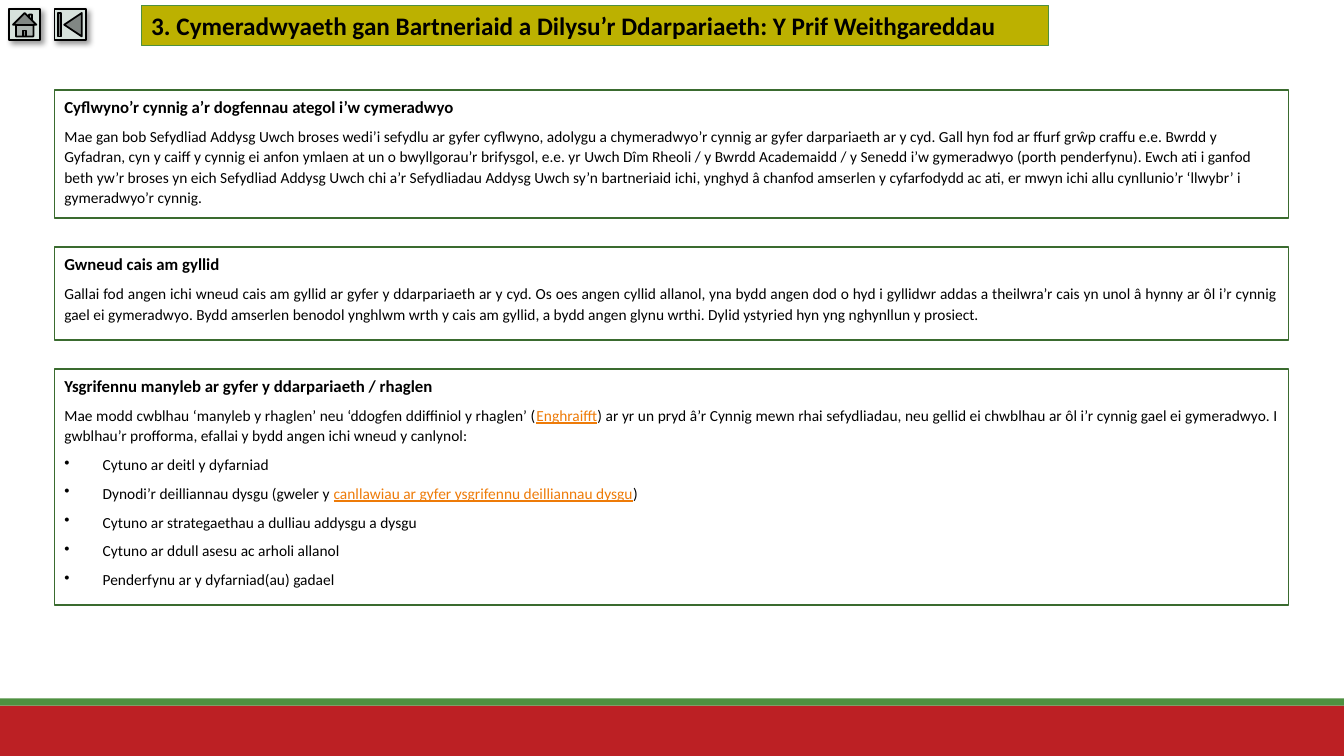
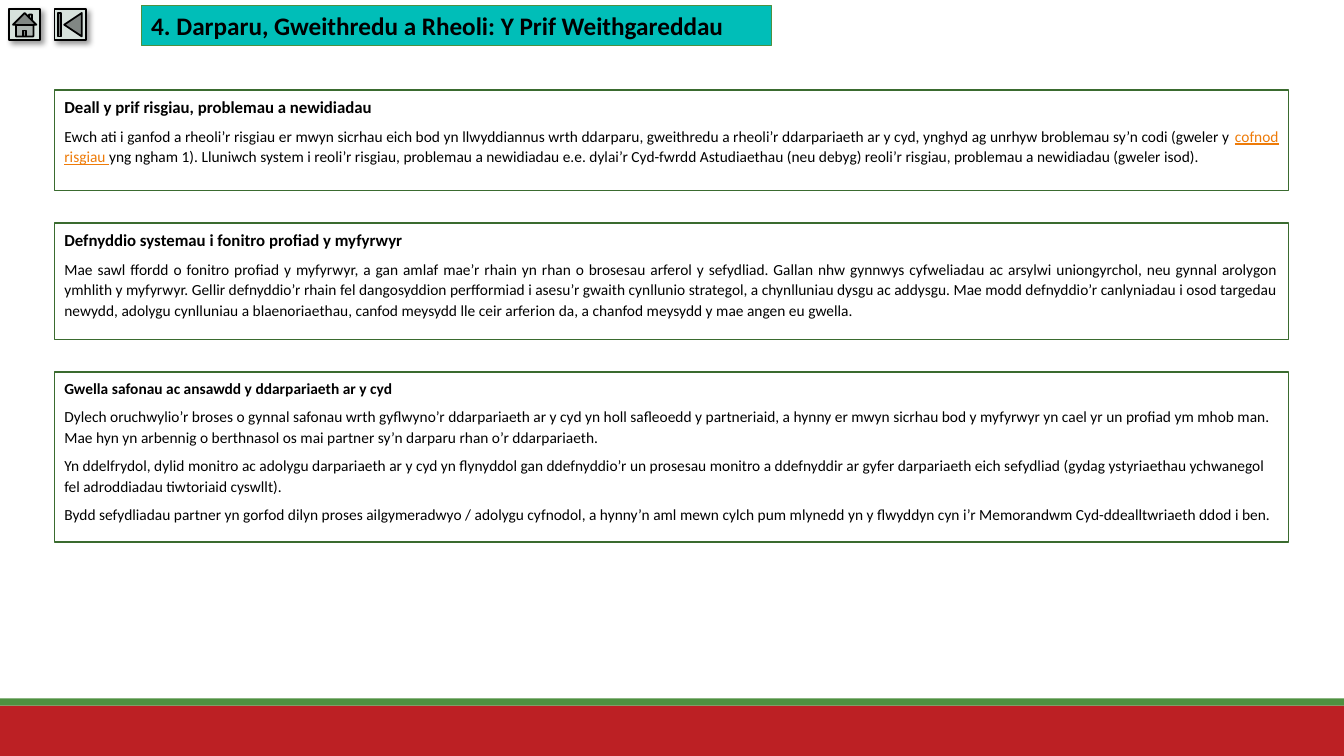
from dataclasses import dataclass

from lxml import etree
from pptx import Presentation
from pptx.dml.color import RGBColor
from pptx.enum.shapes import MSO_SHAPE
from pptx.enum.text import MSO_ANCHOR, MSO_AUTO_SIZE, PP_ALIGN
from pptx.oxml.ns import qn
from pptx.util import Inches, Pt

LEFT, JUSTIFY = PP_ALIGN.LEFT, PP_ALIGN.JUSTIFY
RECTANGLE = MSO_SHAPE.RECTANGLE
BUTTONS = (MSO_SHAPE.ACTION_BUTTON_HOME, MSO_SHAPE.ACTION_BUTTON_BEGINNING)
TITLE_ONLY = 5


@dataclass(frozen=True)
class Theme:
    font: str = "Calibri"
    text: str = "000000"
    link: str = "EE7B08"
    red: str = "BC2024"
    green: str = "4E9040"
    frame: str = "3A6B2F"
    button: str = "D7E2DC"
    olive: str = "BCB100"
    teal: str = "00BEB8"
    title_size: int = 18
    heading_size: int = 12
    body_size: int = 11
    line_spacing: float = 1.1
    gap_after: int = 6


THEME = Theme()
SLIDE_WIDTH, SLIDE_HEIGHT = 13.33, 7.5
PANEL_LEFT, PANEL_TOP, PANEL_WIDTH = 0.54, 0.89, 12.24


@dataclass(frozen=True)
class Panel:
    """A framed text; in its body, words between bars look like links."""
    height: float
    heading: str
    body: tuple
    bullets: tuple = ()
    align: PP_ALIGN = JUSTIFY
    heading_size: int = THEME.heading_size


@dataclass(frozen=True)
class Topic:
    title: str
    title_width: float
    title_fill: str
    panel_gap: float
    panels: tuple


TOPICS = (
    Topic(
        "3. Cymeradwyaeth gan Bartneriaid a Dilysu’r Ddarpariaeth: Y Prif Weithgareddau",
        9, THEME.olive, 0.29,
        (
            Panel(
                1.27, "Cyflwyno’r cynnig a’r dogfennau ategol i’w cymeradwyo",
                ("Mae gan bob Sefydliad Addysg Uwch broses wedi’i sefydlu ar gyfer cyflwyno, "
                 "adolygu a chymeradwyo’r cynnig ar gyfer darpariaeth ar y cyd. Gall hyn fod ar "
                 "ffurf grŵp craffu e.e. Bwrdd y Gyfadran, cyn y caiff y cynnig ei anfon ymlaen "
                 "at un o bwyllgorau’r brifysgol, e.e. yr Uwch Dîm Rheoli / y Bwrdd Academaidd / "
                 "y Senedd i’w gymeradwyo (porth penderfynu). Ewch ati i ganfod beth yw’r broses "
                 "yn eich Sefydliad Addysg Uwch chi a’r Sefydliadau Addysg Uwch sy’n bartneriaid "
                 "ichi, ynghyd â chanfod amserlen y cyfarfodydd ac ati, er mwyn ichi allu "
                 "cynllunio’r ‘llwybr’ i gymeradwyo’r cynnig.",),
                align=LEFT),
            Panel(
                0.92, "Gwneud cais am gyllid",
                ("Gallai fod angen ichi wneud cais am gyllid ar gyfer y ddarpariaeth ar y cyd. "
                 "Os oes angen cyllid allanol, yna bydd angen dod o hyd i gyllidwr addas a "
                 "theilwra’r cais yn unol â hynny ar ôl i’r cynnig gael ei gymeradwyo. Bydd "
                 "amserlen benodol ynghlwm wrth y cais am gyllid, a bydd angen glynu wrthi. "
                 "Dylid ystyried hyn yng nghynllun y prosiect.",)),
            Panel(
                2.34, "Ysgrifennu manyleb ar gyfer y ddarpariaeth / rhaglen",
                ("Mae modd cwblhau ‘manyleb y rhaglen’ neu ‘ddogfen ddiffiniol y rhaglen’ "
                 "(|Enghraifft|) ar yr un pryd â’r Cynnig mewn rhai sefydliadau, neu gellid ei "
                 "chwblhau ar ôl i’r cynnig gael ei gymeradwyo. I gwblhau’r profforma, efallai "
                 "y bydd angen ichi wneud y canlynol:",),
                ("Cytuno ar deitl y dyfarniad",
                 "Dynodi’r deilliannau dysgu (gweler y "
                 "|canllawiau ar gyfer ysgrifennu deilliannau dysgu|)",
                 "Cytuno ar strategaethau a dulliau addysgu a dysgu",
                 "Cytuno ar ddull asesu ac arholi allanol",
                 "Penderfynu ar y dyfarniad(au) gadael")),
        )),
    Topic(
        "4. Darparu, Gweithredu a Rheoli: Y Prif Weithgareddau",
        6.25, THEME.teal, 0.32,
        (
            Panel(
                1, "Deall y prif risgiau, problemau a newidiadau",
                ("Ewch ati i ganfod a rheoli’r risgiau er mwyn sicrhau eich bod yn llwyddiannus "
                 "wrth ddarparu, gweithredu a rheoli’r ddarpariaeth ar y cyd, ynghyd ag unrhyw "
                 "broblemau sy’n codi (gweler y |cofnod risgiau |yng ngham 1). Lluniwch system i "
                 "reoli’r risgiau, problemau a newidiadau e.e. dylai’r Cyd-fwrdd Astudiaethau "
                 "(neu debyg) reoli’r risgiau, problemau a newidiadau (gweler isod).",)),
            Panel(
                1.16, "Defnyddio systemau i fonitro profiad y myfyrwyr",
                ("Mae sawl ffordd o fonitro profiad y myfyrwyr, a gan amlaf mae’r rhain yn rhan "
                 "o brosesau arferol y sefydliad. Gallan nhw gynnwys cyfweliadau ac arsylwi "
                 "uniongyrchol, neu gynnal arolygon ymhlith y myfyrwyr. Gellir defnyddio’r rhain "
                 "fel dangosyddion perfformiad i asesu’r gwaith cynllunio strategol, a "
                 "chynlluniau dysgu ac addysgu. Mae modd defnyddio’r canlyniadau i osod targedau "
                 "newydd, adolygu cynlluniau a blaenoriaethau, canfod meysydd lle ceir arferion "
                 "da, a chanfod meysydd y mae angen eu gwella.",)),
            Panel(
                1.69, "Gwella safonau ac ansawdd y ddarpariaeth ar y cyd",
                ("Dylech oruchwylio’r broses o gynnal safonau wrth gyflwyno’r ddarpariaeth ar y "
                 "cyd yn holl safleoedd y partneriaid, a hynny er mwyn sicrhau bod y myfyrwyr yn "
                 "cael yr un profiad ym mhob man. Mae hyn yn arbennig o berthnasol os mai partner "
                 "sy’n darparu rhan o’r ddarpariaeth.",
                 "Yn ddelfrydol, dylid monitro ac adolygu darpariaeth ar y cyd yn flynyddol gan "
                 "ddefnyddio’r un prosesau monitro a ddefnyddir ar gyfer darpariaeth eich "
                 "sefydliad (gydag ystyriaethau ychwanegol fel adroddiadau tiwtoriaid cyswllt).",
                 "Bydd sefydliadau partner yn gorfod dilyn proses ailgymeradwyo / adolygu "
                 "cyfnodol, a hynny’n aml mewn cylch pum mlynedd yn y flwyddyn cyn i’r Memorandwm "
                 "Cyd-ddealltwriaeth ddod i ben."),
                align=LEFT, heading_size=THEME.body_size),
        )),
)


def rgb(color):
    return RGBColor.from_string(color)


def paint(shape, fill=None, line=None, weight=1.25):
    if fill:
        shape.fill.solid()
        shape.fill.fore_color.rgb = rgb(fill)
    else:
        shape.fill.background()
    if line:
        shape.line.color.rgb = rgb(line)
        shape.line.width = Pt(weight)
    else:
        shape.line.fill.background()


def add_box(page, kind, left, top, width, height, **colors):
    box = page.shapes.add_shape(
        kind, Inches(left), Inches(top), Inches(width), Inches(height))
    box.shadow.inherit = False
    paint(box, **colors)
    return box


def add_drop_shadow(shape):
    effects = shape.element.spPr.find(qn("a:effectLst"))
    shadow = etree.SubElement(
        effects, qn("a:outerShdw"), blurRad=str(Pt(4)), dist=str(Pt(3)),
        dir=str(45 * 60000), algn="tl", rotWithShape="0")
    color = etree.SubElement(shadow, qn("a:srgbClr"), val=THEME.text)
    etree.SubElement(color, qn("a:alpha"), val="40000")


def add_bullet(para):
    properties = para._p.get_or_add_pPr()
    properties.set("marL", str(Inches(0.38)))
    properties.set("indent", str(-Inches(0.38)))
    etree.SubElement(properties, qn("a:buChar"), char="•")


def style_font(font, size, bold=False):
    font.name = THEME.font
    font.size = Pt(size)
    font.bold = bold
    font.color.rgb = rgb(THEME.text)


def write_paragraph(para, text, size, align, bold=False, bullet=False):
    if bullet:
        add_bullet(para)
    para.alignment = align
    para.line_spacing = THEME.line_spacing
    para.space_after = Pt(THEME.gap_after)
    style_font(para.font, size, bold)
    for index, part in enumerate(text.split("|")):
        span = para.add_run()
        span.text = part
        is_link = index % 2 == 1
        span.font.color.rgb = rgb(THEME.link if is_link else THEME.text)
        if is_link:
            span.font.underline = True


def add_panel(page, panel, top):
    box = add_box(page, RECTANGLE, PANEL_LEFT, top, PANEL_WIDTH, panel.height,
                  line=THEME.frame)
    frame = box.text_frame
    frame.word_wrap = True
    frame.vertical_anchor = MSO_ANCHOR.TOP
    write_paragraph(frame.paragraphs[0], panel.heading, panel.heading_size, LEFT, bold=True)
    for text in panel.body:
        write_paragraph(frame.add_paragraph(), text, THEME.body_size, panel.align)
    for text in panel.bullets:
        write_paragraph(frame.add_paragraph(), text, THEME.body_size, LEFT, bullet=True)


def add_navigation(page, left=0.09, top=0.09, size=0.31, step=0.45):
    for index, kind in enumerate(BUTTONS):
        button = add_box(page, kind, left + index * step, top, size, size,
                         fill=THEME.button, line=THEME.text)
        add_drop_shadow(button)


def set_title(page, topic):
    title = page.shapes.title
    title.left, title.top = Inches(1.4), Inches(0.05)
    title.width, title.height = Inches(topic.title_width), Inches(0.4)
    paint(title, topic.title_fill, THEME.green, 0.75)
    frame = title.text_frame
    frame.text = topic.title
    frame.word_wrap = True
    frame.auto_size = MSO_AUTO_SIZE.NONE
    frame.vertical_anchor = MSO_ANCHOR.MIDDLE
    para = frame.paragraphs[0]
    para.alignment = LEFT
    style_font(para.font, THEME.title_size, bold=True)


def move_footer_to_layout(page, layout):
    """Draw the footer bands on a page, then hand them to its layout."""
    bands = ((7, 0.5, THEME.red), (6.93, 0.07, THEME.green))
    for number, (top, height, color) in enumerate(bands, start=101):
        band = add_box(page, RECTANGLE, 0, top, SLIDE_WIDTH, height, fill=color)
        band.element.nvSpPr.cNvPr.set("id", str(number))
        layout.shapes.element.append(band.element)


def add_topic_slide(deck, layout, topic):
    page = deck.slides.add_slide(layout)
    set_title(page, topic)
    add_navigation(page)
    top = PANEL_TOP
    for panel in topic.panels:
        add_panel(page, panel, top)
        top += panel.height + topic.panel_gap
    return page


def main():
    deck = Presentation()
    deck.slide_width, deck.slide_height = Inches(SLIDE_WIDTH), Inches(SLIDE_HEIGHT)
    layout = deck.slide_layouts[TITLE_ONLY]
    pages = [add_topic_slide(deck, layout, topic) for topic in TOPICS]
    move_footer_to_layout(pages[0], layout)
    deck.save("out.pptx")


if __name__ == "__main__":
    main()
